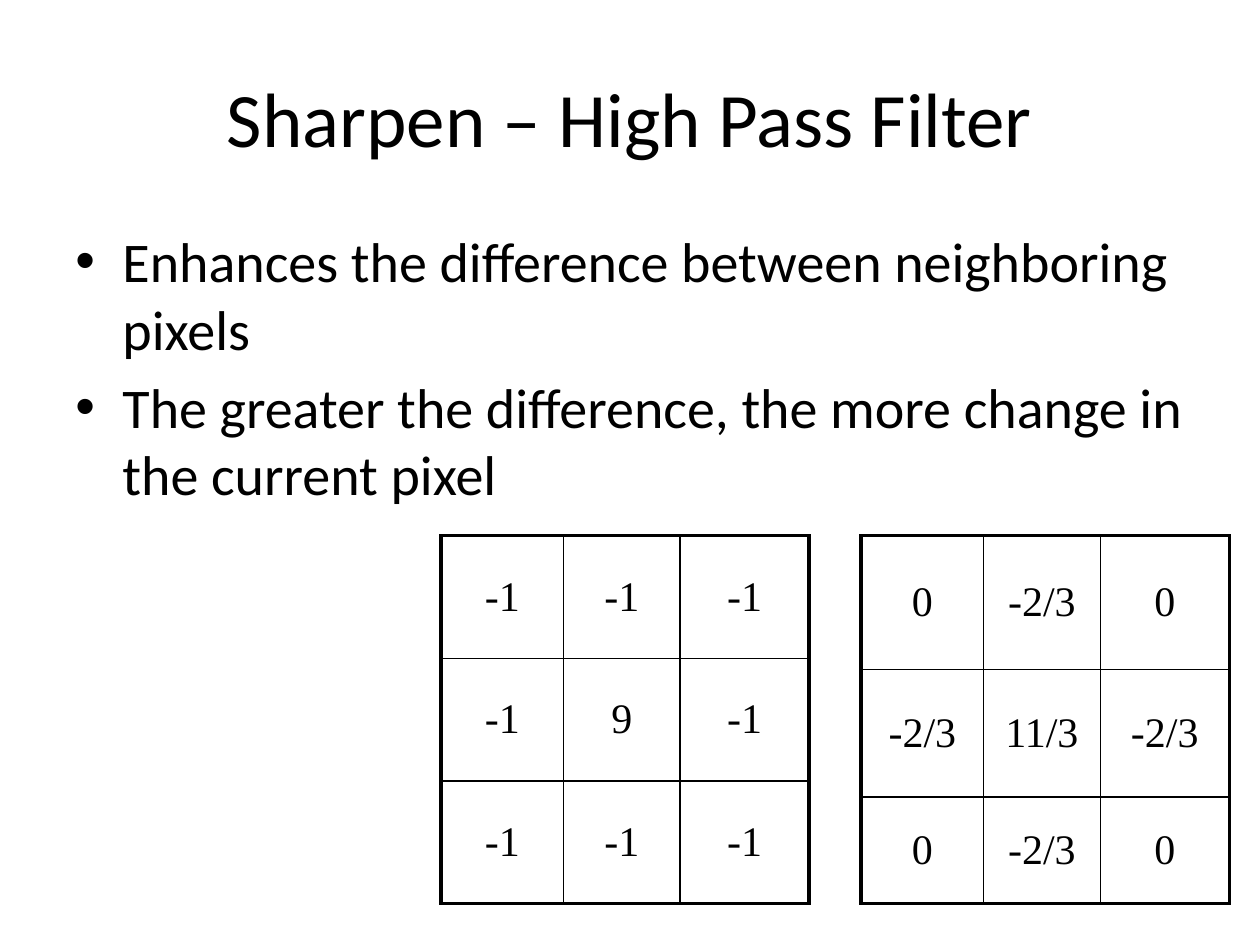
"""Build a slide on sharpening with two high pass filter kernels."""
from lxml import etree
from pptx import Presentation
from pptx import util as u
from pptx.dml.color import RGBColor
from pptx.enum import text
from pptx.oxml import ns

BLACK = RGBColor(0, 0, 0)
TITLE = "Sharpen – High Pass Filter"
POINTS = [
    "Enhances the difference between neighboring pixels",
    "The greater the difference, the more change in the current pixel",
]
COLUMN_WIDTHS = [2.47, 2.35, 2.6]
KERNEL_TOP = 10.8
KERNELS = [
    {"left": 17.36, "heights": [2.7, 2.57, 2.14],
     "values": [["0", "-2/3", "0"], ["-2/3", "11/3", "-2/3"], ["0", "-2/3", "0"]]},
    {"left": 8.89, "heights": [2.47, 2.47, 2.47],
     "values": [["-1", "-1", "-1"], ["-1", "9", "-1"], ["-1", "-1", "-1"]]},
]
THIN, THICK = 1, 2.25


def style(para, font, size):
    para.font.name = font
    para.font.size = u.Pt(size)
    para.font.color.rgb = BLACK


def add_box(page, top, height, anchor):
    box = page.shapes.add_textbox(u.Cm(1.27), u.Cm(top), u.Cm(22.86), u.Cm(height))
    frame = box.text_frame
    frame.word_wrap = True
    frame.vertical_anchor = anchor
    return frame


def add_bullet(para):
    properties = para._p.get_or_add_pPr()
    properties.set("marL", str(u.Cm(0.95)))
    properties.set("indent", str(u.Cm(-0.95)))
    etree.SubElement(properties, ns.qn("a:buFont"), typeface="Arial")
    etree.SubElement(properties, ns.qn("a:buChar"), char="•")


def add_border(cell, side, width):
    properties = cell._tc.get_or_add_tcPr()
    line = etree.SubElement(properties, ns.qn(f"a:ln{side}"), w=str(u.Pt(width)))
    fill = etree.SubElement(line, ns.qn("a:solidFill"))
    etree.SubElement(fill, ns.qn("a:srgbClr"), val=str(BLACK))


def add_kernel(page, left, heights, values):
    frame = page.shapes.add_table(
        len(heights), len(COLUMN_WIDTHS), u.Cm(left), u.Cm(KERNEL_TOP),
        u.Cm(sum(COLUMN_WIDTHS)), u.Cm(sum(heights)))
    table = frame.table
    table.first_row = table.horz_banding = False
    for column, width in zip(table.columns, COLUMN_WIDTHS):
        column.width = u.Cm(width)
    last_row, last_column = len(heights) - 1, len(COLUMN_WIDTHS) - 1
    for i, row in enumerate(table.rows):
        row.height = u.Cm(heights[i])
        for j, cell in enumerate(row.cells):
            cell.text = values[i][j]
            cell.vertical_anchor = text.MSO_ANCHOR.MIDDLE
            para = cell.text_frame.paragraphs[0]
            para.alignment = text.PP_ALIGN.CENTER
            para.space_before = u.Pt(4.8)
            style(para, "Times New Roman", 24)
            outer = {"L": j == 0, "R": j == last_column, "T": i == 0, "B": i == last_row}
            for side, is_outer in outer.items():
                add_border(cell, side, THICK if is_outer else THIN)
            cell.fill.background()


def main():
    deck = Presentation()
    deck.slide_width, deck.slide_height = u.Cm(25.4), u.Cm(19.05)
    page = deck.slides.add_slide(deck.slide_layouts[6])

    title = add_box(page, 0.76, 3.18, text.MSO_ANCHOR.MIDDLE).paragraphs[0]
    title.text = TITLE
    title.alignment = text.PP_ALIGN.CENTER
    style(title, "Calibri", 44)

    body = add_box(page, 4.45, 12.57, text.MSO_ANCHOR.TOP)
    for i, point in enumerate(POINTS):
        para = body.add_paragraph() if i else body.paragraphs[0]
        para.text = point
        para.space_before = u.Pt(6.4)
        add_bullet(para)
        style(para, "Calibri", 32)

    for kernel in KERNELS:
        add_kernel(page, **kernel)
    deck.save("out.pptx")


if __name__ == "__main__":
    main()
